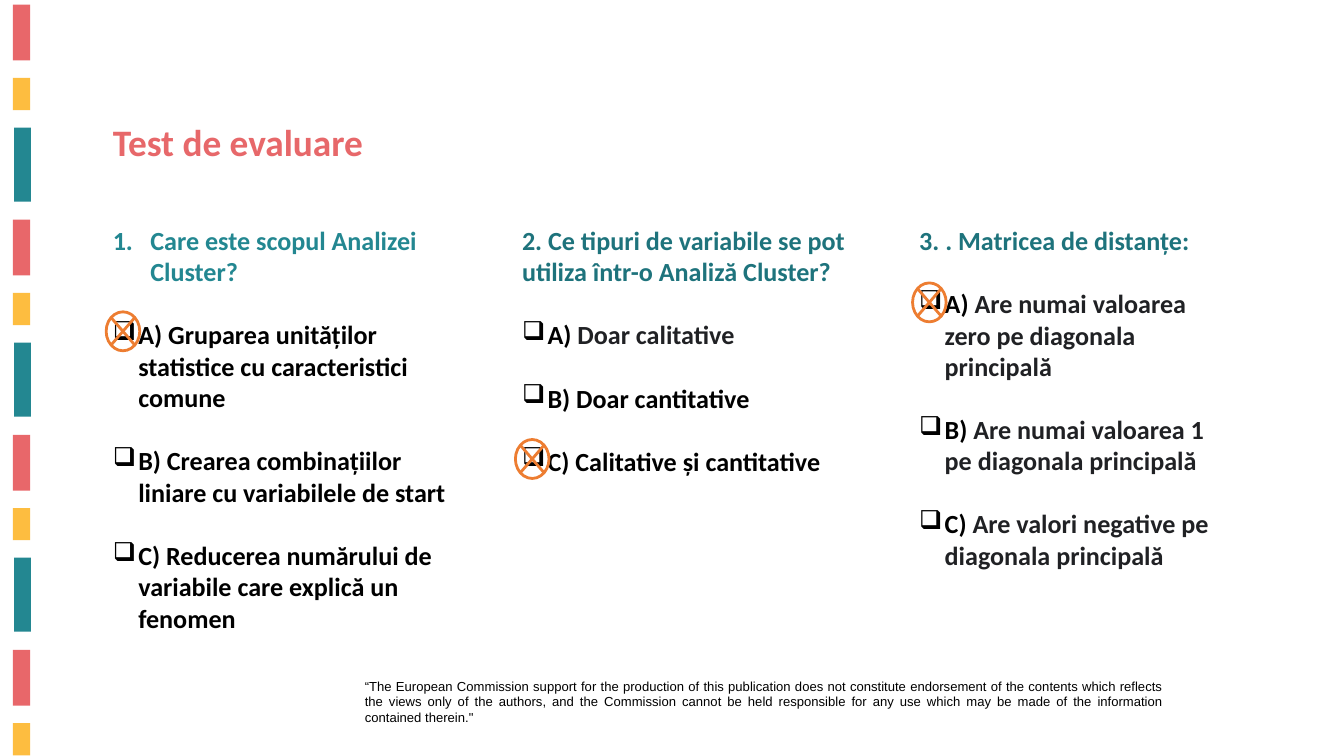
from lxml import etree
from pptx import Presentation
from pptx import util as u
from pptx.dml.color import RGBColor
from pptx.enum import shapes, text
from pptx.oxml import ns

RED = RGBColor(0xE8, 0x67, 0x6A)
TITLE_RED = RGBColor(0xE7, 0x68, 0x6A)
YELLOW = RGBColor(0xFD, 0xBD, 0x40)
TEAL = RGBColor(0x23, 0x87, 0x91)
DARK_TEAL = RGBColor(0x1E, 0x73, 0x7C)
ORANGE = RGBColor(0xED, 0x7D, 0x31)
BLACK = RGBColor(0, 0, 0)
CHARCOAL = RGBColor(0x20, 0x21, 0x24)

STRIPE_PERIOD = 3.2
STRIPES = [  # left, top, width, height, colour
    (0.19, 0.07, 0.26, 0.83, RED),
    (0.19, 1.16, 0.26, 0.48, YELLOW),
    (0.21, 1.9, 0.25, 1.1, TEAL),
]
STRIPE_COUNT = 11

QUESTION_TOP = 3.29
QUESTIONS = [  # left, width, height, heading, colour, numbered, answers, top of mark
    (1.58, 5.5, 6.23, "Care este scopul Analizei Cluster?", TEAL, True, [
        [("A) Gruparea unităților statistice cu caracteristici comune", BLACK)],
        [("B) Crearea combinațiilor liniare cu variabilele de start", BLACK)],
        [("C) Reducerea numărului de variabile care explică un fenomen", BLACK)],
    ], 4.64),
    (7.67, 5.91, 3.87, "2. Ce tipuri de variabile se pot utiliza într-o Analiză Cluster?",
     DARK_TEAL, False, [
        [("A) ", BLACK), ("Doar calitative", CHARCOAL)],
        [("B) Doar cantitative", BLACK)],
        [("C) Calitative și cantitative", BLACK)],
    ], 6.54),
    (13.58, 4.75, 5.28, "3. . Matricea de distanțe:", DARK_TEAL, False, [
        [("A) ", BLACK), ("Are numai valoarea zero pe diagonala principală", CHARCOAL)],
        [("B) ", BLACK), ("Are numai valoarea 1 pe diagonala principală", CHARCOAL)],
        [("C) ", BLACK), ("Are valori negative pe diagonala principală", CHARCOAL)],
    ], 4.21),
]
DISCLAIMER = (
    "“The European Commission support for the production of this publication does not "
    "constitute endorsement of the contents which reflects the views only of the authors, "
    "and the Commission cannot be held responsible for any use which may be made of the "
    "information contained therein.\""
)


class QuizSlide:
    font = "Calibri"
    title_size = 40
    body_size = 28
    answer_gap = 34
    number_indent = 0.56
    box_indent = 0.38

    def __init__(self, slide):
        self.slide = slide

    def stripe(self, left, top, width, height, colour):
        shape = self.slide.shapes.add_shape(
            shapes.MSO_SHAPE.RECTANGLE, *map(u.Inches, (left, top, width, height)))
        shape.shadow.inherit = False
        shape.fill.solid()
        shape.fill.fore_color.rgb = colour
        shape.line.fill.background()

    def text_box(self, left, top, width, height):
        box = self.slide.shapes.add_textbox(*map(u.Inches, (left, top, width, height)))
        box.text_frame.word_wrap = True
        return box.text_frame

    def run(self, paragraph, words, size, colour, bold=True, font=None):
        run = paragraph.add_run()
        run.text = words
        run.font.name = font or self.font
        run.font.size = u.Pt(size)
        run.font.bold = bold
        run.font.color.rgb = colour

    def bullet(self, paragraph, indent, tag, **attributes):
        """Give the paragraph a hanging indent and a bullet element."""
        properties = paragraph._p.get_or_add_pPr()
        properties.set("marL", str(u.Inches(indent)))
        properties.set("indent", str(-u.Inches(indent)))
        etree.SubElement(properties, ns.qn(tag), **attributes)

    def title(self, words):
        frame = self.text_box(1.58, 1.72, 6.58, 1.45)
        self.run(frame.paragraphs[0], words, self.title_size, TITLE_RED)

    def question(self, left, width, height, heading, colour, numbered, answers):
        frame = self.text_box(left, QUESTION_TOP, width, height)
        paragraph = frame.paragraphs[0]
        if numbered:
            self.bullet(paragraph, self.number_indent, "a:buAutoNum", type="arabicPeriod")
        self.run(paragraph, heading, self.body_size, colour)
        for answer in answers:
            paragraph = frame.add_paragraph()
            paragraph.space_before = u.Pt(self.answer_gap)
            self.bullet(paragraph, self.box_indent, "a:buChar", char="❑")
            for words, run_colour in answer:
                self.run(paragraph, words, self.body_size, run_colour)

    def correct_mark(self, left, top):
        shape = self.slide.shapes.add_shape(
            shapes.MSO_SHAPE.FLOWCHART_SUMMING_JUNCTION,
            *map(u.Inches, (left, top, 0.5, 0.58)))
        shape.shadow.inherit = False
        shape.fill.background()
        shape.line.color.rgb = ORANGE
        shape.line.width = u.Pt(3)

    def disclaimer(self, words):
        frame = self.text_box(5.33, 10.04, 12.08, 0.81)
        paragraph = frame.paragraphs[0]
        paragraph.alignment = text.PP_ALIGN.JUSTIFY
        self.run(paragraph, words, 14, BLACK, bold=False, font="Arial")


def main():
    presentation = Presentation()
    presentation.slide_width = u.Inches(20)
    presentation.slide_height = u.Inches(11.25)
    quiz = QuizSlide(presentation.slides.add_slide(presentation.slide_layouts[6]))

    for index in range(STRIPE_COUNT):
        cycle, position = divmod(index, len(STRIPES))
        left, top, width, height, colour = STRIPES[position]
        quiz.stripe(left, top + cycle * STRIPE_PERIOD, width, height, colour)

    quiz.disclaimer(DISCLAIMER)
    quiz.title("Test de evaluare")
    for *question, _ in QUESTIONS:
        quiz.question(*question)
    for left, *_, mark_top in QUESTIONS:
        quiz.correct_mark(left, mark_top)

    presentation.save("out.pptx")


if __name__ == "__main__":
    main()
